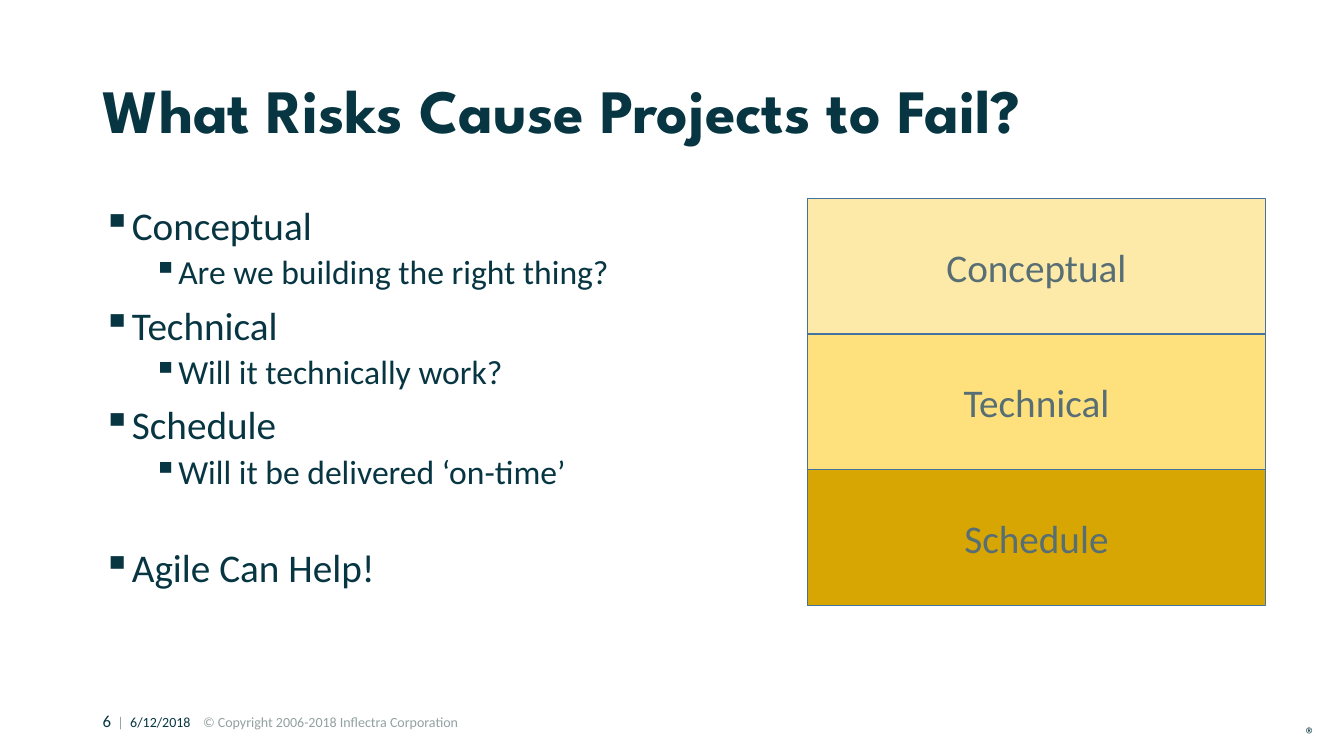
from dataclasses import dataclass

from lxml import etree
from pptx import Presentation
from pptx.dml.color import RGBColor
from pptx.enum.shapes import MSO_SHAPE
from pptx.enum.text import MSO_ANCHOR, PP_ALIGN
from pptx.oxml.ns import qn
from pptx.util import Inches, Pt

RECT = MSO_SHAPE.RECTANGLE
TOP, MIDDLE = MSO_ANCHOR.TOP, MSO_ANCHOR.MIDDLE
LEFT, CENTER = PP_ALIGN.LEFT, PP_ALIGN.CENTER


@dataclass(frozen=True)
class Theme:
    heading_font: str = "League Spartan"
    body_font: str = "Calibri"
    ink: str = "073642"
    muted: str = "93A1A1"
    box_text: str = "586E75"
    box_line: str = "43739E"
    title: int = 44
    level_sizes: tuple = (28, 24)
    box: int = 28
    mark: int = 14
    page: int = 12
    footer: int = 10


class SlideBuilder:
    def __init__(self, prs, theme):
        self.theme = theme
        self.slide = prs.slides.add_slide(prs.slide_layouts[5])

    def style(self, font, size, color, name=None, bold=False):
        values = {"name": name or self.theme.body_font, "size": Pt(size), "bold": bold}
        for key, value in values.items():
            setattr(font, key, value)
        font.color.rgb = RGBColor.from_string(color)

    def frame(self, sp, anchor=TOP):
        tf = sp.text_frame
        tf.word_wrap = True
        tf.vertical_anchor = anchor
        return tf

    def title(self, text, at):
        sp = self.slide.shapes.title
        sp.left, sp.top, sp.width, sp.height = map(Inches, at)
        p = self.frame(sp, MIDDLE).paragraphs[0]
        p.alignment, p.line_spacing = LEFT, 0.9
        r = p.add_run()
        r.text = text
        self.style(r.font, self.theme.title, self.theme.ink, self.theme.heading_font, True)

    def bullets(self, items, at):
        """Add (level, text, space before in points) items."""
        tf = self.frame(self.slide.shapes.add_textbox(*map(Inches, at)))
        for i, (level, text, before) in enumerate(items):
            p = tf.add_paragraph() if i else tf.paragraphs[0]
            p.level, p.line_spacing, p.space_before = level, 0.9, Pt(before)
            pPr = p._p.get_or_add_pPr()
            pPr.set("marL", str(Inches(0.25 + 0.5 * level)))
            pPr.set("indent", str(Inches(-0.25)))
            etree.SubElement(pPr, qn("a:buChar"), char="▪")
            r = p.add_run()
            r.text = text
            self.style(r.font, self.theme.level_sizes[level], self.theme.ink)

    def text_line(self, runs, at, inset=None):
        """Add one line of (text, size, color) runs."""
        tf = self.frame(self.slide.shapes.add_textbox(*map(Inches, at)))
        if inset is not None:
            for side in ("left", "top", "right", "bottom"):
                setattr(tf, f"margin_{side}", Inches(inset))
        for text, size, color in runs:
            r = tf.paragraphs[0].add_run()
            r.text = text
            self.style(r.font, size, color)

    def box(self, text, fill, at):
        sp = self.slide.shapes.add_shape(RECT, *map(Inches, at))
        sp.shadow.inherit = False
        sp.fill.solid()
        sp.fill.fore_color.rgb = RGBColor.from_string(fill)
        sp.line.color.rgb = RGBColor.from_string(self.theme.box_line)
        sp.line.width = Pt(1)
        p = self.frame(sp, MIDDLE).paragraphs[0]
        p.alignment = CENTER
        r = p.add_run()
        r.text = text
        self.style(r.font, self.theme.box, self.theme.box_text)


def main():
    prs = Presentation()
    prs.slide_width, prs.slide_height = Inches(13.33), Inches(7.5)
    theme = Theme()
    s = SlideBuilder(prs, theme)

    s.text_line([
        ("6", theme.page, theme.ink),
        ("  |  ", theme.footer, theme.muted),
        ("6/12/2018  ", theme.footer, theme.ink),
        ("  © Copyright 2006-2018 Inflectra Corporation", theme.footer, theme.muted),
    ], (0.92, 7, 7.47, 0.3))
    s.text_line([("®", theme.mark, theme.ink)], (12.95, 7.16, 0.18, 0.24), inset=0)

    s.title("What Risks Cause Projects to Fail?", (0.92, 0.4, 11.5, 1.45))
    s.bullets([
        (0, "Conceptual", 0),
        (1, "Are we building the right thing?", 5),
        (0, "Technical", 10),
        (1, "Will it technically work?", 5),
        (0, "Schedule", 10),
        (1, "Will it be delivered ‘on-time’", 5),
        (0, "Agile Can Help!", 41),
    ], (0.92, 2, 6.65, 4.76))

    risks = {"Conceptual": "FEEAA8", "Technical": "FEE07D", "Schedule": "D8A602"}
    top, height = 1.97, 1.345
    for i, (risk, fill) in enumerate(risks.items()):
        s.box(risk, fill, (8.01, top + i * height, 4.54, height))

    prs.save("out.pptx")


if __name__ == "__main__":
    main()
